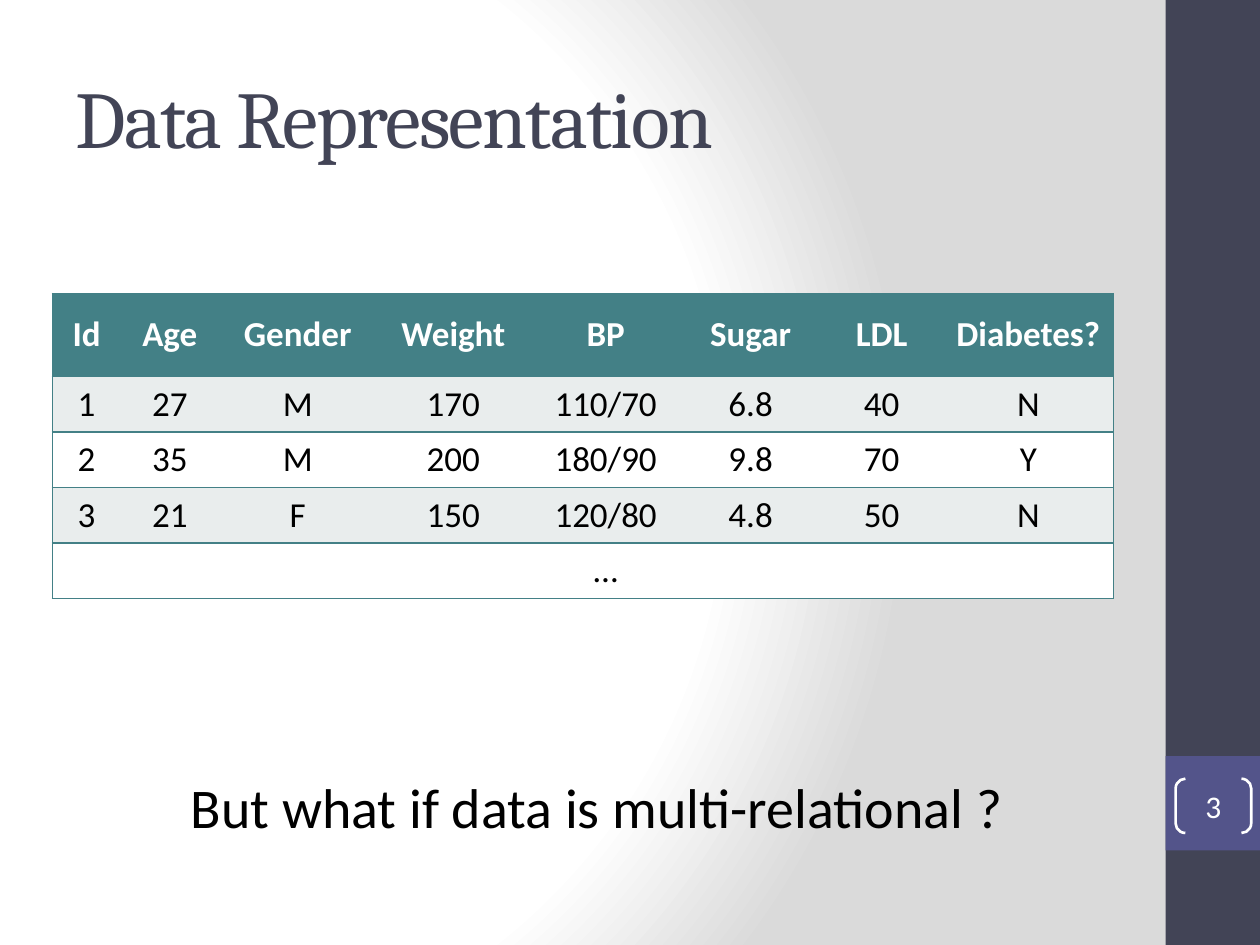
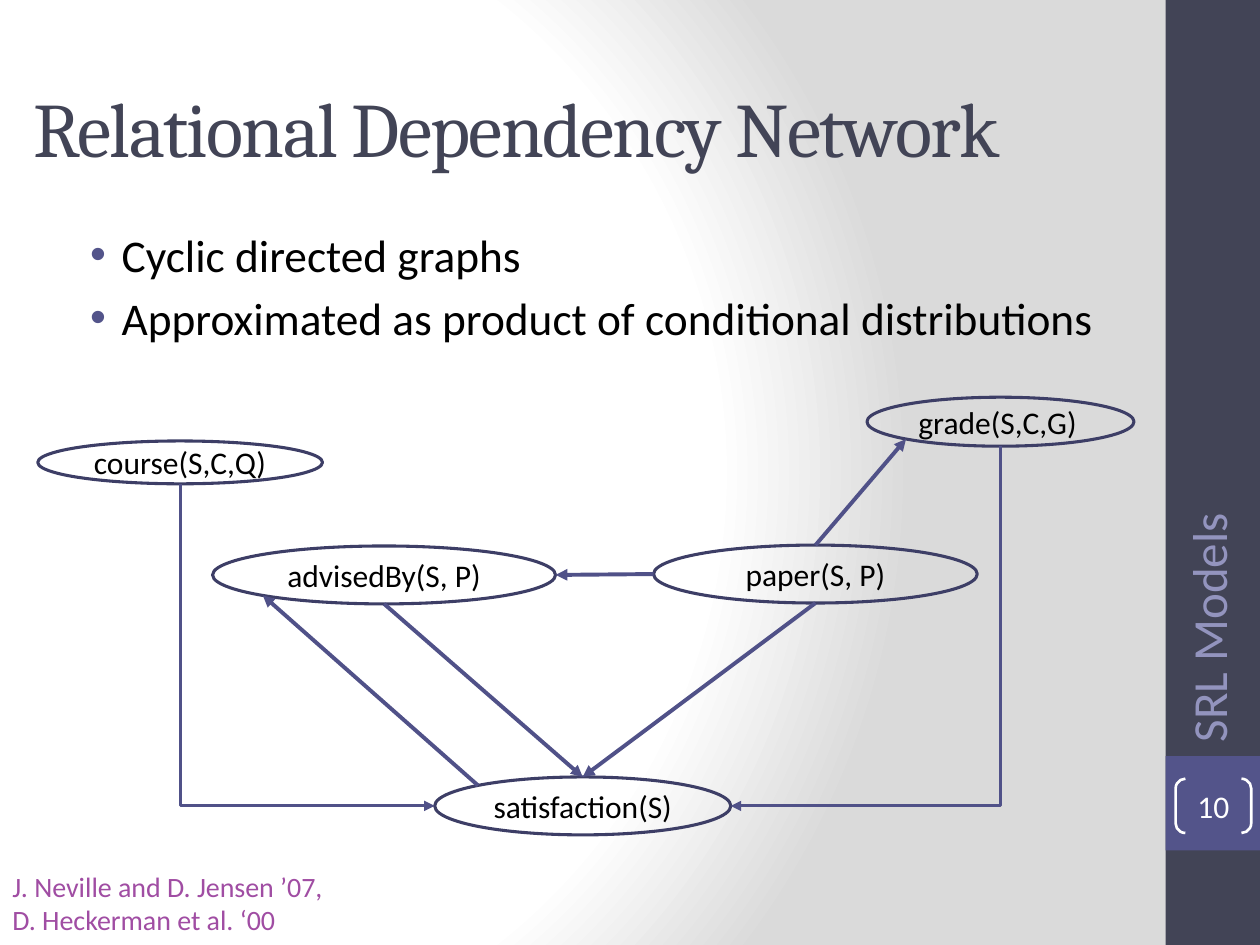
"""Build two slides on relational data and dependency networks."""
import math
from dataclasses import dataclass

from pptx import Presentation
from pptx.dml.color import RGBColor
from pptx.enum import shapes, text
from pptx.oxml import parse_xml
from pptx.oxml.ns import qn
from pptx.util import Pt

NAMESPACES = (
    'xmlns:a="http://schemas.openxmlformats.org/drawingml/2006/main" '
    'xmlns:p="http://schemas.openxmlformats.org/presentationml/2006/main"'
)
COLORS = {
    "white": "FFFFFF", "black": "000000", "edge_gray": "DADADA",
    "navy": "424456", "indigo": "53548A", "lavender": "9394BE",
    "teal": "438086", "stripe": "E9EDED", "citation": "A04DA3",
    "oval_line": "3D3E66", "arrow": "505188",
}
NO_TABLE_STYLE = "{2D5ABB26-0587-4C30-8999-92F81FD0307C}"
TITLE_ONLY, TITLE_AND_CONTENT = 5, 1


@dataclass(frozen=True)
class Box:
    left: float
    top: float
    width: float
    height: float

    def lengths(self) -> tuple:
        return Pt(self.left), Pt(self.top), Pt(self.width), Pt(self.height)

    def rim_point(self, degrees: float) -> tuple:
        angle = math.radians(degrees)
        return (
            Pt(self.left + self.width / 2 * (1 + math.cos(angle))),
            Pt(self.top + self.height / 2 * (1 + math.sin(angle))),
        )


@dataclass(frozen=True)
class Style:
    size: float
    color: str
    font: str = "Calibri"
    bold: bool = False
    spacing: int = 0


@dataclass(frozen=True)
class Predicate:
    label: str
    box: Box
    align: text.PP_ALIGN = text.PP_ALIGN.CENTER


@dataclass(frozen=True)
class Arrow:
    source: str
    source_angle: float
    target: str
    target_angle: float
    bent: bool = False


RIGHT, BOTTOM, BOTTOM_LEFT, LEFT, TOP_LEFT, TOP = 0, 90, 135, 180, 225, 270

PREDICATES = {
    "satisfaction": Predicate("satisfaction(S)", Box(248.4, 444, 169.2, 33.1)),
    "course": Predicate("course(S,C,Q)", Box(21.6, 252, 162.7, 24.5)),
    "grade": Predicate("grade(S,C,G)", Box(495.4, 227, 152.6, 28), text.PP_ALIGN.LEFT),
    "advised": Predicate("advisedBy(S, P)", Box(121.5, 312, 196, 33.1)),
    "paper": Predicate("paper(S, P)", Box(373.5, 311.5, 185, 33.1)),
}
ARROWS = [
    Arrow("course", BOTTOM, "satisfaction", LEFT, bent=True),
    Arrow("grade", BOTTOM, "satisfaction", RIGHT, bent=True),
    Arrow("advised", BOTTOM, "satisfaction", TOP),
    Arrow("paper", BOTTOM, "satisfaction", TOP),
    Arrow("paper", LEFT, "advised", RIGHT),
    Arrow("satisfaction", TOP_LEFT, "advised", BOTTOM_LEFT),
    Arrow("paper", TOP, "grade", BOTTOM_LEFT),
]
PATIENTS = [
    ["Id", "Age", "Gender", "Weight", "BP", "Sugar", "LDL", "Diabetes?"],
    ["1", "27", "M", "170", "110/70", "6.8", "40", "N"],
    ["2", "35", "M", "200", "180/90", "9.8", "70", "Y"],
    ["3", "21", "F", "150", "120/80", "4.8", "50", "N"],
    ["", "", "", "", "…", "", "", ""],
]
COLUMN_WIDTHS = [39, 56.2, 90, 87.8, 86.4, 79.2, 70.5, 97.2]
HEADER_HEIGHT, ROW_HEIGHT = 47.3, 31.7


def rgb(name: str) -> RGBColor:
    return RGBColor.from_string(COLORS[name])


def style_paragraph(paragraph, style: Style, align=text.PP_ALIGN.LEFT) -> None:
    paragraph.alignment = align
    for run in paragraph.runs:
        run.font.name = style.font
        run.font.size = Pt(style.size)
        run.font.bold = style.bold
        run.font.color.rgb = rgb(style.color)
        if style.spacing:
            run.font._element.set("spc", str(style.spacing))


def place(shape, box: Box) -> None:
    shape.left, shape.top, shape.width, shape.height = box.lengths()


def add_preset(slide, preset, box: Box, fill: str = "", line: str = "", weight: float = 0):
    shape = slide.shapes.add_shape(preset, *box.lengths())
    shape.shadow.inherit = False
    if fill:
        shape.fill.solid()
        shape.fill.fore_color.rgb = rgb(fill)
    else:
        shape.fill.background()
    if line:
        shape.line.color.rgb = rgb(line)
        shape.line.width = Pt(weight)
    else:
        shape.line.fill.background()
    return shape


def set_label(shape, label: str, style: Style, align=text.PP_ALIGN.CENTER) -> None:
    frame = shape.text_frame
    frame.text = label
    frame.vertical_anchor = text.MSO_ANCHOR.MIDDLE
    style_paragraph(frame.paragraphs[0], style, align)


def add_text(slide, content: str, box: Box, style: Style, rotation: float = 0) -> None:
    shape = slide.shapes.add_textbox(*box.lengths())
    shape.rotation = rotation
    shape.text_frame.word_wrap = True
    paragraph = shape.text_frame.paragraphs[0]
    paragraph.text = content
    style_paragraph(paragraph, style)


def set_master_background(master) -> None:
    stops = "".join(
        f'<a:gs pos="{percent * 1000}"><a:srgbClr val="{COLORS[name]}"/></a:gs>'
        for percent, name in ((0, "white"), (75, "white"), (100, "edge_gray"))
    )
    slide_data = master._element.cSld
    for background in slide_data.findall(qn("p:bg")):
        slide_data.remove(background)
    slide_data.insert(0, parse_xml(
        f'<p:bg {NAMESPACES}><p:bgPr><a:gradFill rotWithShape="1"><a:gsLst>{stops}</a:gsLst>'
        '<a:path path="circle"><a:fillToRect l="20000" t="50000" r="100000" b="50000"/></a:path>'
        "</a:gradFill><a:effectLst/></p:bgPr></p:bg>"
    ))


def add_master_bands(slide, master) -> None:
    bands = ((Box(666, 0, 54, 540), "navy"), (Box(666, 432, 54, 54), "indigo"))
    for position, (box, color) in enumerate(bands, start=2):
        band = add_preset(slide, shapes.MSO_SHAPE.RECTANGLE, box, color)
        master.shapes._spTree.insert(position, band._element)


def set_title(slide, title: str, box: Box, size: float) -> None:
    shape = slide.shapes.title
    place(shape, box)
    set_label(shape, title, Style(size, "navy", "Cambria", spacing=-100), text.PP_ALIGN.LEFT)
    shape.text_frame.auto_size = text.MSO_AUTO_SIZE.NONE


def add_page_number(slide, number: int) -> None:
    bracket = add_preset(
        slide, shapes.MSO_SHAPE.DOUBLE_BRACKET, Box(671.8, 445, 43.2, 31), line="white", weight=1.5
    )
    bracket.adjustments[0] = 0.18
    frame = bracket.text_frame
    frame.margin_left = frame.margin_right = frame.margin_top = frame.margin_bottom = Pt(0)
    set_label(bracket, str(number), Style(18, "white"))


def set_bullets(slide, box: Box, items: list) -> None:
    body = slide.placeholders[1]
    place(body, box)
    frame = body.text_frame
    frame.text = "\n".join(items)
    frame.auto_size = text.MSO_AUTO_SIZE.NONE
    for index, paragraph in enumerate(frame.paragraphs):
        paragraph.space_before = Pt(5 if index else 0)
        properties = paragraph._p.get_or_add_pPr()
        properties.set("marL", str(Pt(27)))
        properties.set("indent", str(Pt(-18)))
        for bullet in (
            f'<a:buClr {NAMESPACES}><a:srgbClr val="{COLORS["indigo"]}"/></a:buClr>',
            f'<a:buFont {NAMESPACES} typeface="Arial"/>',
            f'<a:buChar {NAMESPACES} char="•"/>',
        ):
            properties.append(parse_xml(bullet))
        style_paragraph(paragraph, Style(25.9, "black"))


def set_borders(cell, sides: str) -> None:
    properties = cell._tc.get_or_add_tcPr()
    for position, side in enumerate(sides):
        properties.insert(position, parse_xml(
            f'<a:ln{side} {NAMESPACES} w="{Pt(1)}"><a:solidFill>'
            f'<a:srgbClr val="{COLORS["teal"]}"/></a:solidFill></a:ln{side}>'
        ))


def add_patient_table(slide, left: float, top: float) -> None:
    row_heights = [HEADER_HEIGHT] + [ROW_HEIGHT] * (len(PATIENTS) - 1)
    box = Box(left, top, sum(COLUMN_WIDTHS), sum(row_heights))
    table = slide.shapes.add_table(len(PATIENTS), len(COLUMN_WIDTHS), *box.lengths()).table
    table._tbl.tblPr[0].text = NO_TABLE_STYLE
    for column, width in zip(table.columns, COLUMN_WIDTHS):
        column.width = Pt(width)
    for row_index, (row, height) in enumerate(zip(table.rows, row_heights)):
        row.height = Pt(height)
        is_header = row_index == 0
        fill = "teal" if is_header else "stripe" if row_index % 2 else "white"
        style = Style(20, "white" if is_header else "black", bold=is_header)
        for column_index, (cell, value) in enumerate(zip(row.cells, PATIENTS[row_index])):
            cell.text = value
            cell.vertical_anchor = text.MSO_ANCHOR.MIDDLE
            style_paragraph(cell.text_frame.paragraphs[0], style, text.PP_ALIGN.CENTER)
            cell.fill.solid()
            cell.fill.fore_color.rgb = rgb(fill)
            left_side = "L" if column_index == 0 else ""
            right_side = "R" if column_index == len(COLUMN_WIDTHS) - 1 else ""
            set_borders(cell, left_side + right_side + "TB")


def add_predicate(slide, predicate: Predicate) -> None:
    oval = add_preset(
        slide, shapes.MSO_SHAPE.OVAL, predicate.box, line="oval_line", weight=1.75
    )
    set_label(oval, predicate.label, Style(18, "black"), predicate.align)


def add_arrow(slide, arrow: Arrow) -> None:
    start = PREDICATES[arrow.source].box.rim_point(arrow.source_angle)
    end = PREDICATES[arrow.target].box.rim_point(arrow.target_angle)
    kind, arrow_end = shapes.MSO_CONNECTOR.STRAIGHT, "tailEnd"
    if arrow.bent:
        start, end = end, start
        kind, arrow_end = shapes.MSO_CONNECTOR.ELBOW, "headEnd"
    connector = slide.shapes.add_connector(kind, *start, *end)
    connector.line.color.rgb = rgb("arrow")
    connector.line.width = Pt(1.75 if arrow.bent else 2.25)
    properties = connector._element.spPr
    if arrow.bent:
        properties.find(qn("a:prstGeom")).set("prst", "bentConnector2")
    connector.line._get_or_add_ln().append(
        parse_xml(f'<a:{arrow_end} {NAMESPACES} type="triangle"/>')
    )
    properties.append(parse_xml(f"<a:effectLst {NAMESPACES}/>"))


def build_data_slide(presentation):
    slide = presentation.slides.add_slide(presentation.slide_layouts[TITLE_ONLY])
    set_title(slide, "Data Representation", Box(36, 21.6, 600, 90), 46)
    add_patient_table(slide, 30, 167.8)
    add_text(slide, "But what if data is multi-relational ?", Box(102, 438, 594, 46), Style(32, "black"))
    add_page_number(slide, 3)
    return slide


def build_network_slide(presentation) -> None:
    slide = presentation.slides.add_slide(presentation.slide_layouts[TITLE_AND_CONTENT])
    set_title(slide, "Relational Dependency Network", Box(12, 27.4, 648, 90), 44)
    set_bullets(slide, Box(35.3, 126, 625, 84), [
        "Cyclic directed graphs",
        "Approximated as product of conditional distributions",
    ])
    add_text(slide, "J. Neville and D. Jensen ’07,\vD. Heckerman et al. ‘00",
             Box(0, 493.2, 258, 46), Style(16, "citation"))
    add_text(slide, "SRL Models", Box(548, 268.5, 284.4, 41), Style(28, "lavender"), 270)
    for predicate in PREDICATES.values():
        add_predicate(slide, predicate)
    for arrow in ARROWS:
        add_arrow(slide, arrow)
    add_page_number(slide, 10)


def main() -> None:
    presentation = Presentation()
    presentation.slide_width, presentation.slide_height = Pt(720), Pt(540)
    set_master_background(presentation.slide_master)
    data_slide = build_data_slide(presentation)
    add_master_bands(data_slide, presentation.slide_master)
    build_network_slide(presentation)
    presentation.save("out.pptx")


if __name__ == "__main__":
    main()
